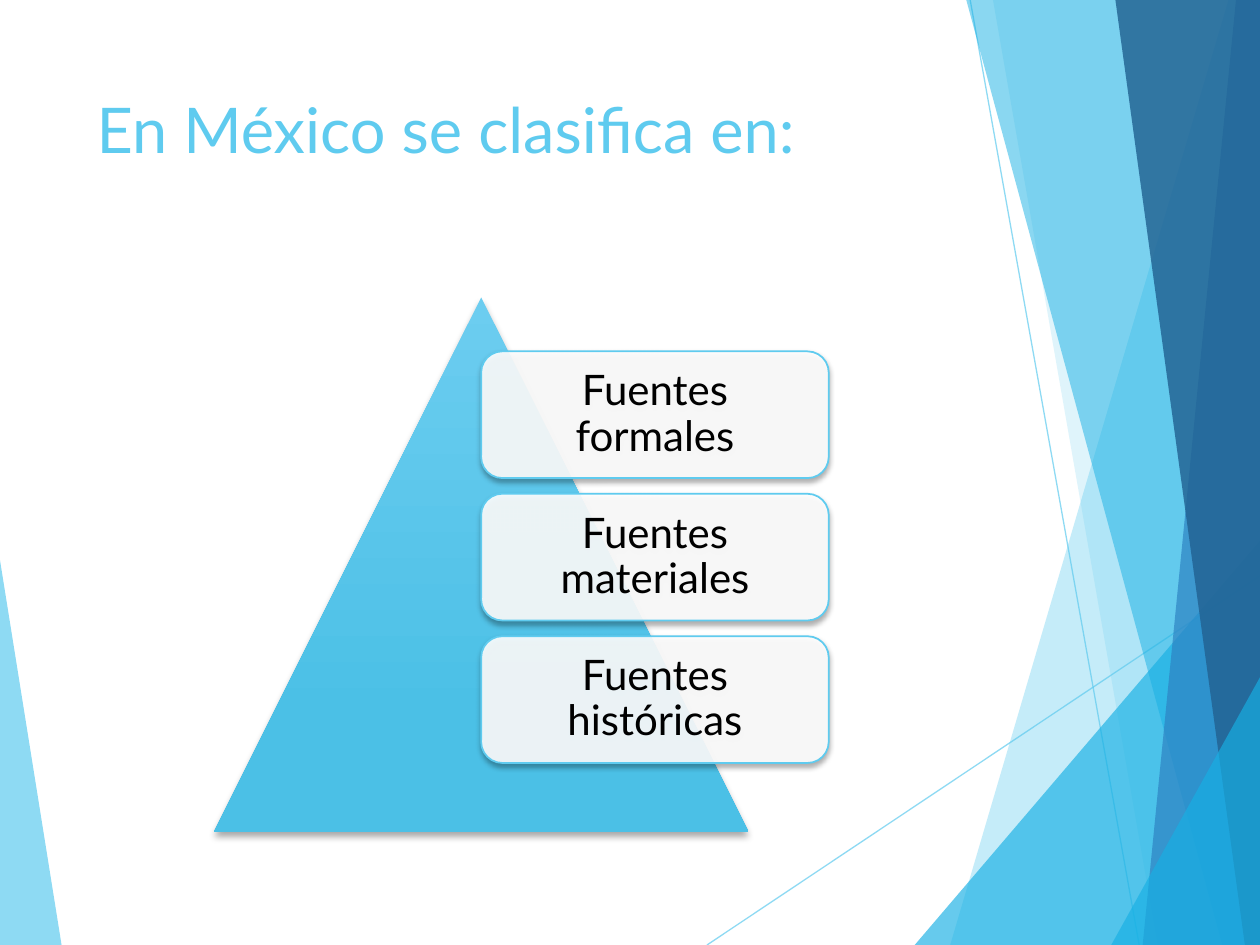
from lxml.etree import SubElement
from pptx import Presentation
from pptx.dml.color import RGBColor as RGB
from pptx.enum.shapes import MSO_CONNECTOR as CONN, MSO_SHAPE as SHAPE
from pptx.enum.text import MSO_ANCHOR as ANCHOR, PP_ALIGN as ALIGN
from pptx.oxml.ns import qn
from pptx.util import Pt

HUES = {
    "sky": "5FCBEF", "cyan": "17B0E4", "blue": "2E83C3", "navy": "226292",
    "light": "6CCDF0", "deep": "4BC0E6", "white": "FFFFFF", "black": "000000",
}
INK = {name: RGB.from_string(code) for name, code in HUES.items()}


def fade(shape, pct):
    """Set the opacity of the first colour in a shape, in percent."""
    tint = shape.element.spPr.find(".//" + qn("a:srgbClr"))
    SubElement(tint, qn("a:alpha"), val=str(pct * 1000))


def put(shape, text, size, hue, align, anchor, pad=(7.2, 3.6), gap=1.0):
    frame = shape.text_frame
    frame.word_wrap = True
    frame.vertical_anchor = anchor
    frame.margin_left = frame.margin_right = Pt(pad[0])
    frame.margin_top = frame.margin_bottom = Pt(pad[1])
    para = frame.paragraphs[0]
    para.alignment = align
    para.line_spacing = gap
    run = para.add_run()
    run.text = text
    run.font.name = "Lato"
    run.font.size = Pt(size)
    run.font.color.rgb = INK[hue]


deck = Presentation()
deck.slide_width, deck.slide_height = Pt(720), Pt(540)
slide = deck.slides.add_slide(deck.slide_layouts[5])
shapes = slide.shapes

# Thin rays behind the facets
for ends in [(404, 540, 720, 329), (554.4, 0, 651, 540)]:
    ray = shapes.add_connector(CONN.STRAIGHT, *map(Pt, ends))
    ray.line.color.rgb = INK["sky"]
    ray.line.width = Pt(0.75)
    fade(ray, 70)
    SubElement(ray.element.spPr, qn("a:effectLst"))

# Translucent facets, back to front
facets = [
    ("sky", 70, [(0, 320), (35.2, 540), (0, 540)]),
    ("sky", 36, [(702, 0), (543, 540), (720, 540), (720, 0)]),
    ("sky", 20, [(567.4, 0), (661.6, 540), (720, 540), (720, 0)]),
    ("cyan", 66, [(522.7, 540), (720, 309), (720, 540)]),
    ("cyan", 50, [(552.2, 0), (698.4, 540), (720, 540), (720, 0)]),
    ("blue", 70, [(706.3, 0), (653, 540), (720, 540), (720, 0)]),
    ("navy", 82, [(637.4, 0), (711.4, 540), (720, 540), (720, 0)]),
    ("cyan", 66, [(635, 540), (720, 387), (720, 540)]),
]
for hue, pct, spots in facets:
    spots = [(Pt(x), Pt(y)) for x, y in spots]
    pen = shapes.build_freeform(*spots[0])
    pen.add_line_segments(spots[1:], close=True)
    facet = pen.convert_to_shape()
    facet.shadow.inherit = False
    facet.fill.solid()
    facet.fill.fore_color.rgb = INK[hue]
    facet.line.fill.background()
    fade(facet, pct)

title = shapes.title
title.left, title.top, title.width, title.height = map(Pt, (48, 48, 500, 104))
put(title, "En México se clasifica en:", 36, "sky", ALIGN.LEFT, ANCHOR.TOP)

# Pyramid
cone = shapes.add_shape(SHAPE.ISOSCELES_TRIANGLE,
                        *map(Pt, (122.4, 170, 305.2, 305.2)))
cone.fill.gradient()
cone.fill.gradient_angle = 270
stops = cone.fill.gradient_stops
for stop, hue, spot in zip(stops, ("light", "deep"), (0, 0.78)):
    stop.color.rgb = INK[hue]
    stop.position = spot
cone.line.fill.background()
raised = [(cone, 4, 3)]

# Cards, evenly spaced down the pyramid
for i, kind in enumerate(["formales", "materiales", "históricas"]):
    card = shapes.add_shape(SHAPE.ROUNDED_RECTANGLE, Pt(275),
                            Pt(200.8 + i * 81.4), Pt(198.6), Pt(72.4))
    card.fill.solid()
    card.fill.fore_color.rgb = INK["white"]
    fade(card, 90)
    card.line.color.rgb = INK["sky"]
    card.line.width = Pt(1)
    put(card, f"Fuentes {kind}", 24, "black", ALIGN.CENTER, ANCHOR.MIDDLE,
        pad=(12, 7.2), gap=0.9)
    raised.append((card, 3, 2))

# Soft shadows straight below
for shape, blur, drop in raised:
    shape.shadow.inherit = False
    effects = shape.element.spPr.find(qn("a:effectLst"))
    shade = SubElement(effects, qn("a:outerShdw"), blurRad=str(Pt(blur)),
                       dist=str(Pt(drop)), dir="5400000", rotWithShape="0")
    tint = SubElement(shade, qn("a:srgbClr"), val=HUES["black"])
    SubElement(tint, qn("a:alpha"), val="35000")

deck.save("out.pptx")
